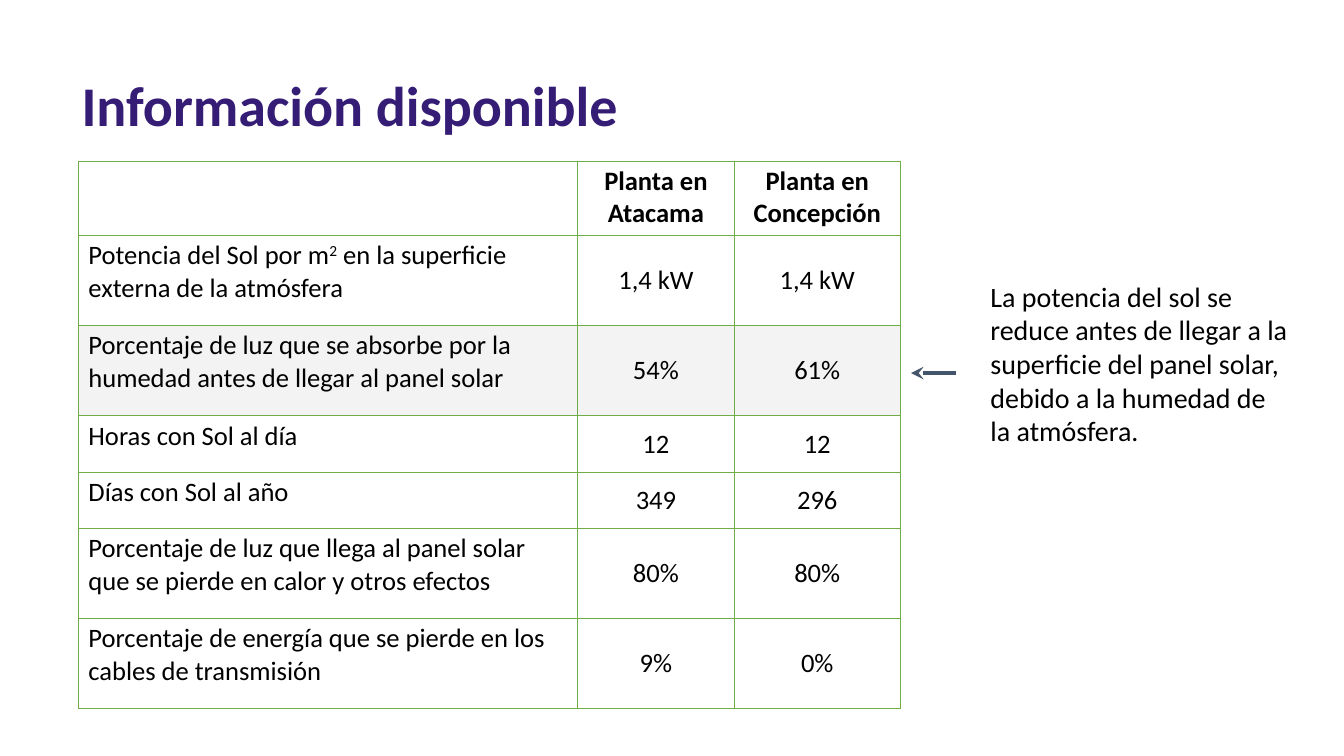
from lxml.etree import SubElement
from pptx import Presentation
from pptx.dml.color import RGBColor
from pptx.enum.shapes import MSO_CONNECTOR
from pptx.enum.text import MSO_ANCHOR, PP_ALIGN
from pptx.oxml.ns import qn
from pptx.util import Cm, Pt

PURPLE = RGBColor(0x35, 0x1C, 0x75)
GREEN = RGBColor(0x70, 0xAD, 0x47)
SLATE = RGBColor(0x44, 0x54, 0x6A)
LIGHT_GRAY = RGBColor(0xF3, 0xF3, 0xF3)
WHITE = RGBColor(0xFF, 0xFF, 0xFF)
BLACK = RGBColor(0, 0, 0)

ROWS = [
    ("", "Planta en Atacama", "Planta en Concepción"),
    ("Potencia del Sol por m^2^ en la superficie externa de la atmósfera", "1,4 kW", "1,4 kW"),
    ("Porcentaje de luz que se absorbe por la humedad antes de llegar al panel solar", "54%", "61%"),
    ("Horas con Sol al día", "12", "12"),
    ("Días con Sol al año", "349", "296"),
    ("Porcentaje de luz que llega al panel solar que se pierde en calor y otros efectos", "80%", "80%"),
    ("Porcentaje de energía que se pierde en los cables de transmisión", "9%", "0%"),
]
COL_WIDTHS = [12.57, 3.96, 4.17]
HEADER, TALL, SHORT = 1.88, 2.27, 1.42
ROW_HEIGHTS = [HEADER, TALL, TALL, SHORT, SHORT, TALL, TALL]
HIGHLIGHTED_ROW = 2
NOTE = ("La potencia del sol se reduce antes de llegar a la superficie del panel solar, "
        "debido a la humedad de la atmósfera.")


class SlideBuilder:
    font = "Calibri"

    def __init__(self, slide):
        self.slide = slide

    def set_text(self, tf, text, size, color=BLACK, bold=False, align=PP_ALIGN.LEFT):
        """Fill a text frame; text between carets is superscript."""
        tf.word_wrap = True
        p = tf.paragraphs[0]
        p.alignment = align
        p.font.name, p.font.size, p.font.bold = self.font, Pt(size), bold
        p.font.color.rgb = color
        for i, part in enumerate(text.split("^")):
            r = p.add_run()
            r.text = part
            if i % 2:
                r._r.get_or_add_rPr().set("baseline", "30000")

    def title(self, text, left, top, width, height):
        sp = self.slide.shapes.title
        sp.left, sp.top, sp.width, sp.height = Cm(left), Cm(top), Cm(width), Cm(height)
        sp.text_frame.vertical_anchor = MSO_ANCHOR.TOP
        self.set_text(sp.text_frame, text, 40, PURPLE, bold=True)

    def text(self, text, left, top, width, height):
        sp = self.slide.shapes.add_textbox(Cm(left), Cm(top), Cm(width), Cm(height))
        self.set_text(sp.text_frame, text, 20)

    def border(self, cell, color, width):
        tc_pr = cell._tc.get_or_add_tcPr()
        for side in ("a:lnL", "a:lnR", "a:lnT", "a:lnB"):
            ln = SubElement(tc_pr, qn(side), w=str(Pt(width)))
            fill = SubElement(ln, qn("a:solidFill"))
            SubElement(fill, qn("a:srgbClr"), val=str(color))

    def table(self, rows, left, top, widths, heights, highlighted):
        table = self.slide.shapes.add_table(
            len(rows), len(widths), Cm(left), Cm(top), Cm(sum(widths)), Cm(sum(heights))).table
        table.first_row = table.horz_banding = False
        for column, width in zip(table.columns, widths):
            column.width = Cm(width)
        for i, (row, height) in enumerate(zip(rows, heights)):
            table.rows[i].height = Cm(height)
            for j, text in enumerate(row):
                cell = table.cell(i, j)
                cell.margin_left = cell.margin_right = Cm(0.25)
                cell.margin_top = cell.margin_bottom = Cm(0.1)
                cell.vertical_anchor = MSO_ANCHOR.MIDDLE if i and j else MSO_ANCHOR.TOP
                self.border(cell, GREEN, 0.75)
                cell.fill.solid()
                cell.fill.fore_color.rgb = LIGHT_GRAY if i == highlighted else WHITE
                if text:
                    self.set_text(cell.text_frame, text, 19, bold=i == 0,
                                  align=PP_ALIGN.CENTER if j else PP_ALIGN.LEFT)

    def arrow(self, x1, y1, x2, y2):
        line = self.slide.shapes.add_connector(
            MSO_CONNECTOR.STRAIGHT, Cm(x1), Cm(y1), Cm(x2), Cm(y2))
        line.line.color.rgb = SLATE
        line.line.width = Pt(3)
        sp_pr = line._element.spPr
        SubElement(sp_pr.find(qn("a:ln")), qn("a:tailEnd"), type="stealth")
        SubElement(sp_pr, qn("a:effectLst"))


def main():
    prs = Presentation()
    prs.slide_width, prs.slide_height = Cm(33.87), Cm(19.05)
    s = SlideBuilder(prs.slides.add_slide(prs.slide_layouts[5]))
    s.title("Información disponible", 1.8, 1.65, 21.82, 1.96)
    s.table(ROWS, 1.98, 4.06, COL_WIDTHS, ROW_HEIGHTS, HIGHLIGHTED_ROW)
    s.text(NOTE, 24.71, 6.91, 8, 4.52)
    s.arrow(24.08, 9.4, 22.96, 9.4)
    prs.save("out.pptx")


if __name__ == "__main__":
    main()
